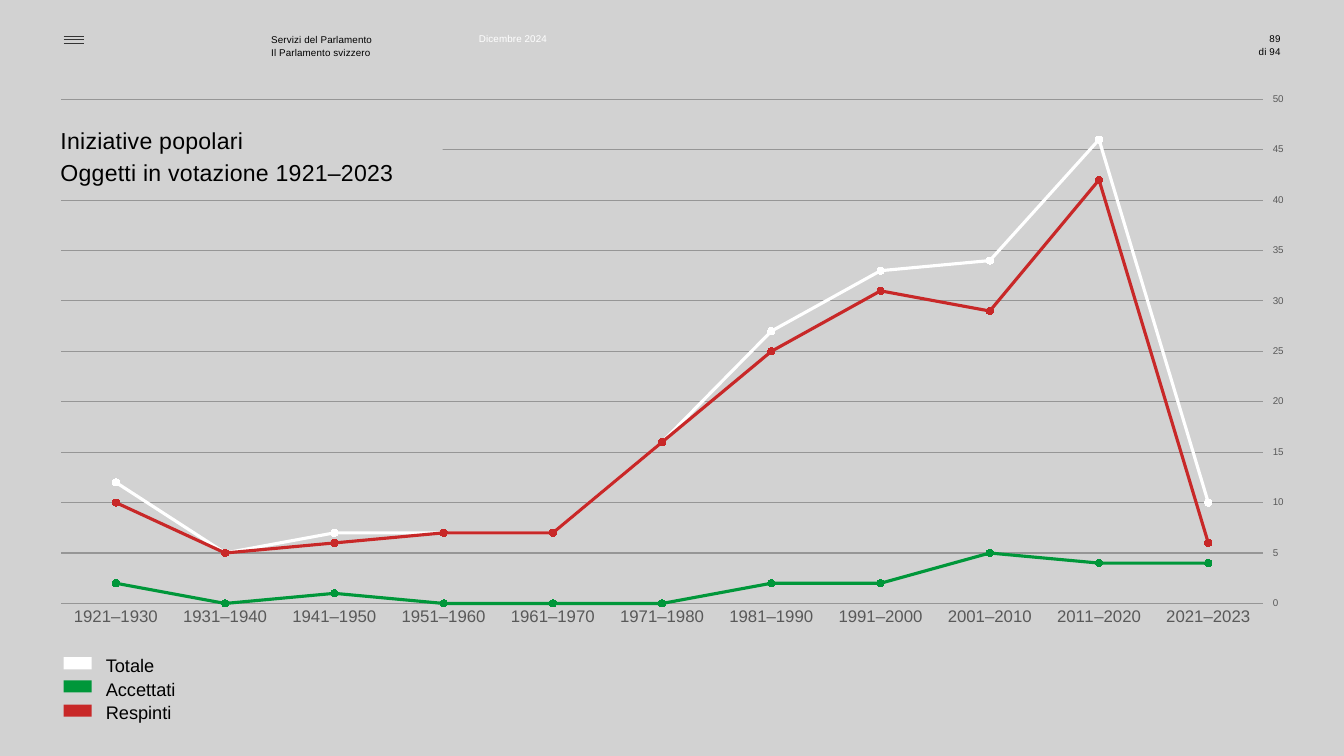
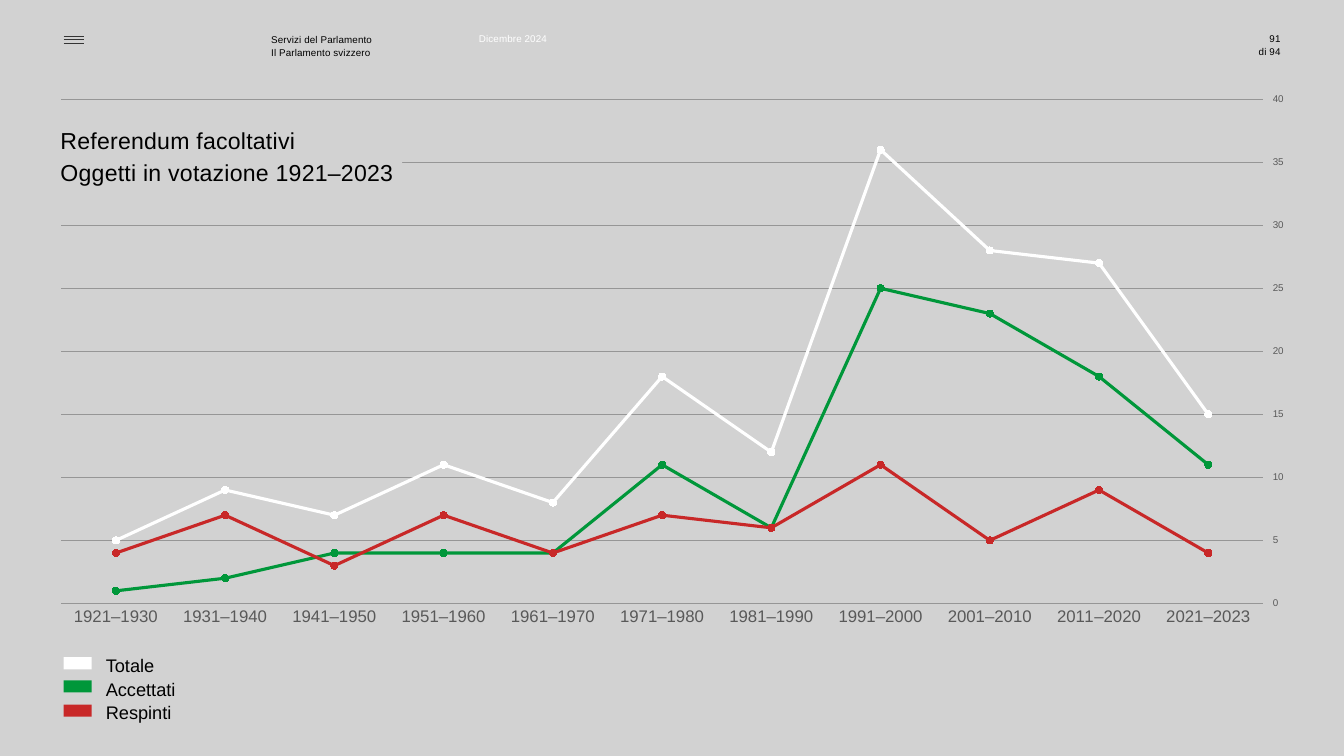
from dataclasses import dataclass

from lxml.etree import SubElement
from pptx import Presentation
from pptx.chart.data import CategoryChartData
from pptx.dml.color import RGBColor
from pptx.enum.chart import XL_CHART_TYPE, XL_MARKER_STYLE, XL_TICK_LABEL_POSITION, XL_TICK_MARK
from pptx.enum.shapes import MSO_CONNECTOR, MSO_SHAPE
from pptx.enum.text import PP_ALIGN
from pptx.oxml import parse_xml
from pptx.oxml.ns import nsdecls, qn
from pptx.util import Emu, Pt

PX = 9144  # 100 px to the inch


@dataclass(frozen=True)
class Theme:
    font: str = "Arial"
    background: str = "D2D2D2"
    text: str = "000000"
    axis_text: str = "595959"
    grid: str = "969696"
    menu: str = "343434"
    white: str = "FFFFFF"
    green: str = "00973A"
    red: str = "C82828"
    small: float = 7
    axis: float = 12
    legend: float = 13
    title: float = 16.5
    grid_width: float = 0.75
    series_width: float = 2.25


THEME = Theme()
COLORS = {"Totale": THEME.white, "Accettati": THEME.green, "Respinti": THEME.red}
PERIODS = [f"{y}–{y + 9}" for y in range(1921, 2021, 10)] + ["2021–2023"]
PLOT = {"x": 0.008, "y": 0.028, "w": 0.969, "h": 0.903}

SLIDES = [
    {
        "page": 89, "title": "Iniziative popolari", "mask": 400, "maximum": 50,
        "series": {
            "Accettati": [2, 0, 1, 0, 0, 0, 2, 2, 5, 4, 4],
            "Totale": [12, 5, 7, 7, 7, 16, 27, 33, 34, 46, 10],
            "Respinti": [10, 5, 6, 7, 7, 16, 25, 31, 29, 42, 6],
        },
    },
    {
        "page": 91, "title": "Referendum facoltativi", "mask": 360, "maximum": 40,
        "series": {
            "Accettati": [1, 2, 4, 4, 4, 11, 6, 25, 23, 18, 11],
            "Respinti": [4, 7, 3, 7, 4, 7, 6, 11, 5, 9, 4],
            "Totale": [5, 9, 7, 11, 8, 18, 12, 36, 28, 27, 15],
        },
    },
]


def px(*values):
    return [Emu(v * PX) for v in values]


def rgb(color):
    return RGBColor.from_string(color)


def style_font(font, size, color):
    font.name = THEME.font
    font.size = Pt(size)
    font.color.rgb = rgb(color)


def style_line(line, color, width):
    line.color.rgb = rgb(color)
    line.width = Pt(width)


class Deck:
    """Holds the presentation and the slide being built."""

    def __init__(self):
        self.prs = Presentation()
        self.prs.slide_width, self.prs.slide_height = px(1333, 750)
        fill = self.prs.slide_master.background.fill
        fill.solid()
        fill.fore_color.rgb = rgb(THEME.background)
        self.slide = None

    def new_slide(self):
        self.slide = self.prs.slides.add_slide(self.prs.slide_layouts[6])

    def text(self, x, y, w, h, lines, size=THEME.small, color=THEME.text,
             align=PP_ALIGN.LEFT, spacing=None, tracking=0):
        """Add one paragraph per line; tracking is in hundredths of a point."""
        tf = self.slide.shapes.add_textbox(*px(x, y, w, h)).text_frame
        tf.word_wrap = True
        tf.margin_left = tf.margin_top = tf.margin_right = tf.margin_bottom = 0
        for i, line in enumerate(lines):
            p = tf.paragraphs[0] if i == 0 else tf.add_paragraph()
            p.alignment = align
            p.line_spacing = spacing
            style_font(p.font, size, color)
            r = p.add_run()
            r.text = line
            if tracking:
                r._r.get_or_add_rPr().set("spc", str(tracking))

    def box(self, x, y, w, h, color):
        sp = self.slide.shapes.add_shape(MSO_SHAPE.RECTANGLE, *px(x, y, w, h))
        sp.shadow.inherit = False
        sp.fill.solid()
        sp.fill.fore_color.rgb = rgb(color)
        sp.line.fill.background()

    def rule(self, x1, x2, y):
        cxn = self.slide.shapes.add_connector(MSO_CONNECTOR.STRAIGHT, *px(x1, y, x2, y))
        style_line(cxn.line, THEME.menu, 0.4)
        SubElement(cxn._element.spPr, qn("a:effectLst"))

    def header(self, page):
        for i in range(3):
            self.rule(63, 83, 36 + 7 * i // 2)
        self.text(269, 32, 130, 25, ["Servizi del Parlamento", "Il Parlamento svizzero"],
                  spacing=1.1, tracking=10)
        self.text(475, 32, 121, 12, ["Dicembre 2024"], color=THEME.white, tracking=10)
        for y, line in ((32, str(page)), (45, "di 94")):
            self.text(1226, y, 44, 12, [line], align=PP_ALIGN.RIGHT, tracking=10)

    def title(self, first_line, mask_width):
        """Add the title over a mask that hides the gridline behind it."""
        self.box(39, 112, mask_width, 82, THEME.background)
        self.text(60, 122, 559, 96, [first_line, "Oggetti in votazione 1921–2023"],
                  size=THEME.title, spacing=1.14, tracking=20)

    def legend(self):
        for i, color in enumerate(COLORS.values()):
            self.box(63, 652 + 47 * i // 2, 28, 12, color)
        self.text(105, 647, 120, 72, COLORS, size=THEME.legend, spacing=Pt(17))

    def line_chart(self, series, maximum):
        data = CategoryChartData()
        data.categories = PERIODS
        for name, values in series.items():
            data.add_series(name, values)
        chart = self.slide.shapes.add_chart(
            XL_CHART_TYPE.LINE_MARKERS, *px(51, 83, 1230, 554), data).chart
        style_font(chart.font, 10, THEME.text)
        chart.has_legend = False
        chart.has_title = False
        self.style_axes(chart, maximum)
        self.place_plot(chart)
        plot = chart.plots[0]
        plot.vary_by_categories = False
        for s in plot.series:
            color = COLORS[s.name]
            s.smooth = False
            style_line(s.format.line, color, THEME.series_width)
            s.marker.style = XL_MARKER_STYLE.CIRCLE
            s.marker.size = 5
            s.marker.format.fill.solid()
            s.marker.format.fill.fore_color.rgb = rgb(color)
            s.marker.format.line.fill.background()

    @staticmethod
    def style_axes(chart, maximum):
        cat, val = chart.category_axis, chart.value_axis
        for axis, size in ((cat, THEME.axis), (val, THEME.small)):
            axis.major_tick_mark = axis.minor_tick_mark = XL_TICK_MARK.NONE
            style_font(axis.tick_labels.font, size, THEME.axis_text)
        style_line(cat.format.line, THEME.grid, THEME.grid_width)
        val.minimum_scale, val.maximum_scale, val.major_unit = 0, maximum, 5
        val.tick_label_position = XL_TICK_LABEL_POSITION.HIGH
        val.format.line.fill.background()
        style_line(val.major_gridlines.format.line, THEME.grid, THEME.grid_width)

    @staticmethod
    def place_plot(chart):
        """Fix the inner plot area as fractions of the chart."""
        places = "".join(f'<c:{k} val="{v}"/>' for k, v in PLOT.items())
        area = chart._chartSpace.chart.plotArea
        for old in area.findall(qn("c:layout")):
            area.remove(old)
        area.insert(0, parse_xml(
            f'<c:layout {nsdecls("c")}><c:manualLayout><c:layoutTarget val="inner"/>'
            f'<c:xMode val="edge"/><c:yMode val="edge"/>{places}'
            '</c:manualLayout></c:layout>'))


def main():
    deck = Deck()
    for content in SLIDES:
        deck.new_slide()
        deck.header(content["page"])
        deck.line_chart(content["series"], content["maximum"])
        deck.title(content["title"], content["mask"])
        deck.legend()
    deck.prs.save("out.pptx")


if __name__ == "__main__":
    main()
